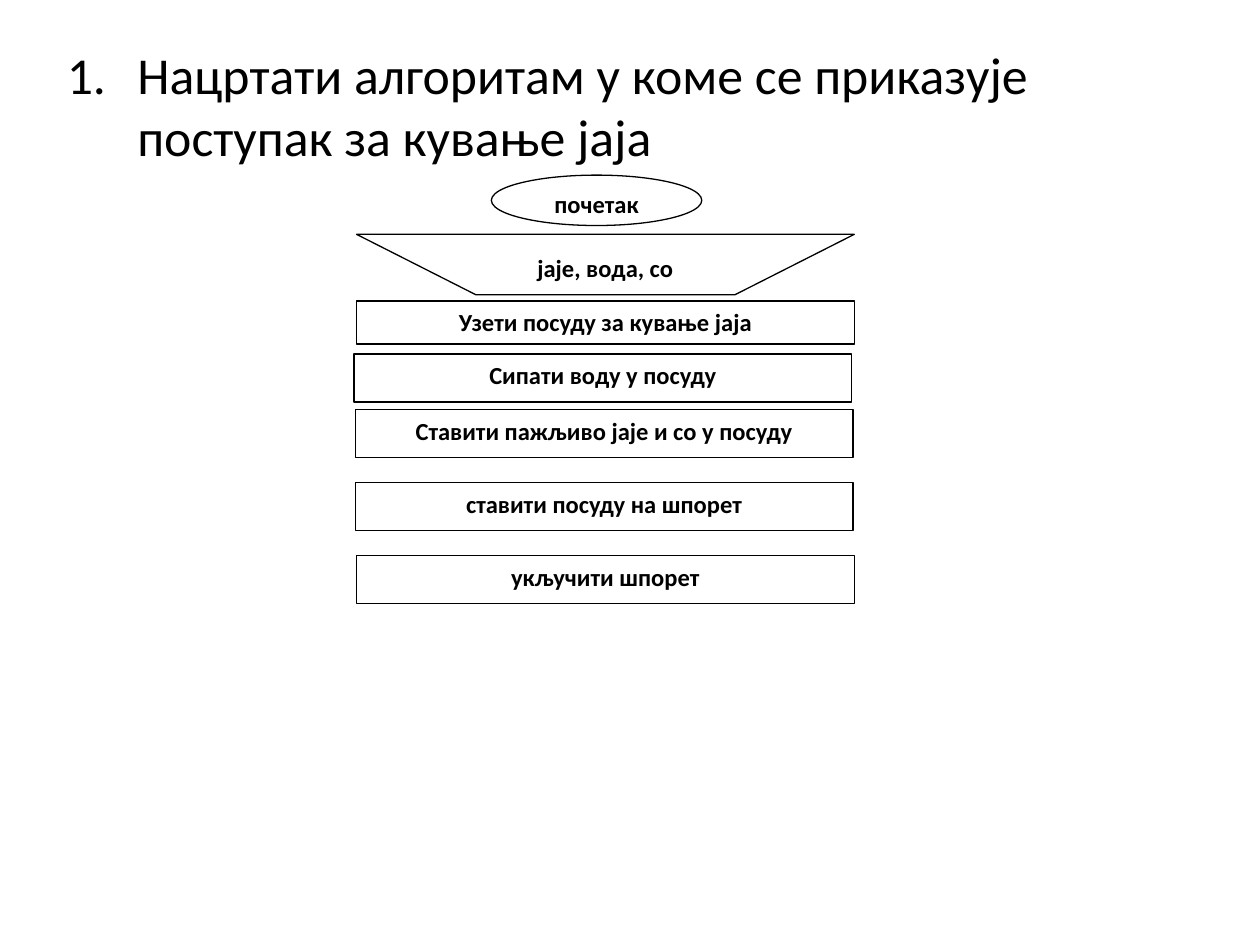
from lxml.etree import SubElement
from pptx import Presentation
from pptx.dml.color import RGBColor
from pptx.enum.shapes import MSO_SHAPE as Shape
from pptx.enum.text import MSO_ANCHOR as Anchor, MSO_AUTO_SIZE as AutoSize, PP_ALIGN as Align
from pptx.oxml.ns import qn
from pptx.util import Inches, Pt

FONT = "Calibri"
BLACK, WHITE = "000000", "FFFFFF"
STEP_WIDTH, STEP_HEIGHT = 3.95, 0.38

# Step text, left and top offset within the chart, height
STEPS = [
    ("Узети посуду за кување јаја", 0.02, 1.0, 0.34),
    ("Сипати воду у посуду", 0, 1.42, STEP_HEIGHT),
    ("Ставити пажљиво јаје и со у посуду", 0.01, 1.86, STEP_HEIGHT),
    ("ставити посуду на шпорет", 0.01, 2.44, STEP_HEIGHT),
    ("укључити шпорет", 0.02, 3.02, STEP_HEIGHT),
]


def color(hex_value):
    return RGBColor.from_string(hex_value)


def write(frame, text, size, bold=False, align=Align.LEFT, after=0, top_inset=0.05):
    frame.word_wrap = True
    frame.auto_size = AutoSize.NONE
    frame.vertical_anchor = Anchor.TOP
    frame.margin_top = Inches(top_inset)
    paragraph = frame.paragraphs[0]
    paragraph.alignment = align
    paragraph.space_after = Pt(after)
    run = paragraph.add_run()
    run.text = text
    run.font.name, run.font.size, run.font.bold = FONT, Pt(size), bold
    run.font.color.rgb = color(BLACK)
    return paragraph


def finish_block(block, text, top_inset=0.05):
    block.shadow.inherit = False
    block.fill.solid()
    block.fill.fore_color.rgb = color(WHITE)
    block.line.color.rgb = color(BLACK)
    block.line.width = Pt(0.75)
    write(block.text_frame, text, 14, bold=True, align=Align.CENTER,
          after=10, top_inset=top_inset)


def add_block(slide, kind, text, left, top, width, height):
    block = slide.shapes.add_shape(
        kind, Inches(left), Inches(top), Inches(width), Inches(height))
    finish_block(block, text)


def add_input(slide, text, left, top, width, height):
    """Trapezoid, wide side up, for the data that enters the algorithm."""
    slant = width * 0.24
    builder = slide.shapes.build_freeform(Inches(left), Inches(top))
    builder.add_line_segments([
        (Inches(left + slant), Inches(top + height)),
        (Inches(left + width - slant), Inches(top + height)),
        (Inches(left + width), Inches(top)),
    ], close=True)
    finish_block(builder.convert_to_shape(), text, top_inset=0.15)


def add_task(slide, text, left, top, width, height):
    """Numbered task statement in the body placeholder."""
    task = slide.placeholders[1]
    task.left, task.top = Inches(left), Inches(top)
    task.width, task.height = Inches(width), Inches(height)
    paragraph = write(task.text_frame, text, 29.6)
    properties = paragraph._p.get_or_add_pPr()
    properties.set("marL", str(Inches(0.56)))
    properties.set("indent", str(-Inches(0.56)))
    SubElement(properties, qn("a:buFont"), typeface="+mj-lt")
    SubElement(properties, qn("a:buAutoNum"), type="arabicPeriod")


def add_flowchart(slide, left, top):
    add_block(slide, Shape.OVAL, "почетак", left + 1.09, top, 1.67, 0.4)
    add_input(slide, "јаје, вода, со", left + 0.02, top + 0.47, STEP_WIDTH, 0.48)
    for text, shift, drop, height in STEPS:
        add_block(slide, Shape.RECTANGLE, text, left + shift, top + drop,
                  STEP_WIDTH, height)


def main():
    deck = Presentation()
    deck.slide_width, deck.slide_height = Inches(10), Inches(7.5)
    slide = deck.slides.add_slide(deck.slide_layouts[1])
    unused_title = slide.shapes.title.element
    unused_title.getparent().remove(unused_title)
    add_task(slide, "Нацртати алгоритам у коме се приказује поступак за кување јаја",
             0.43, 0.29, 9, 0.98)
    add_flowchart(slide, 2.81, 1.39)
    deck.save("out.pptx")


if __name__ == "__main__":
    main()
